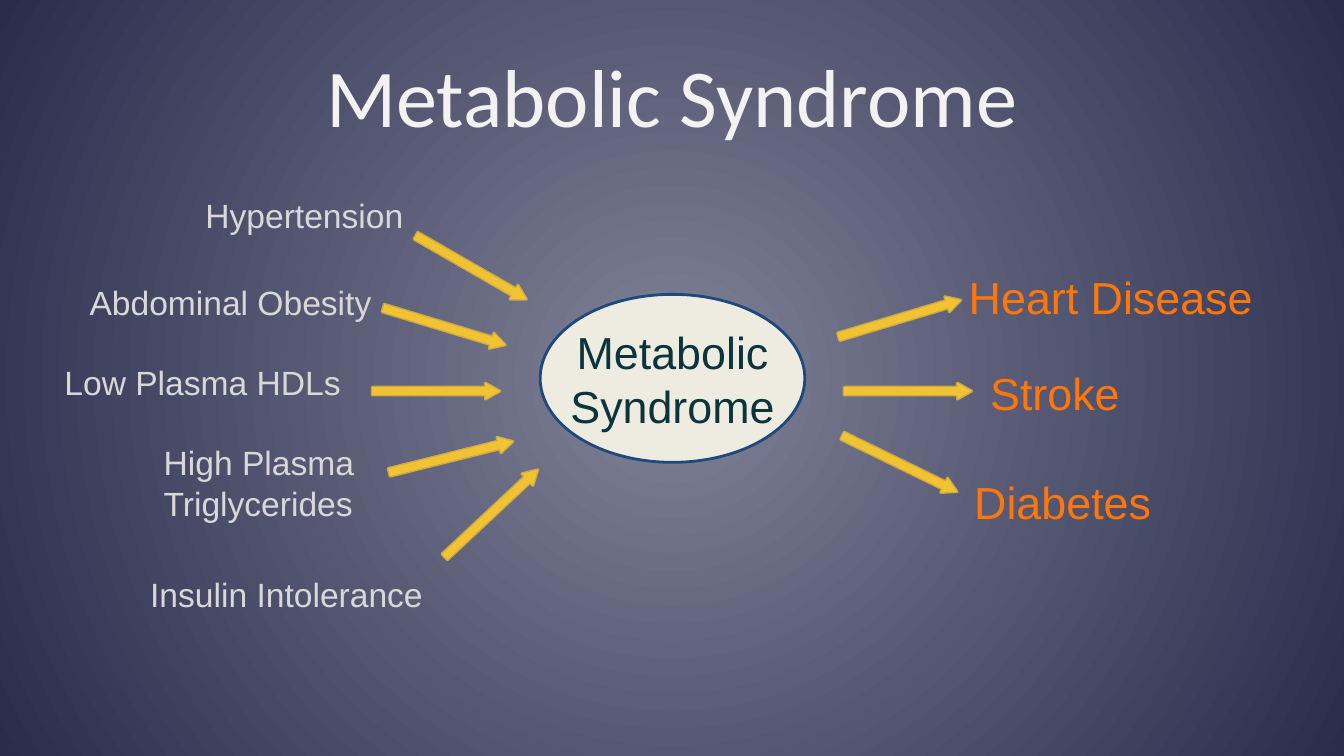
from lxml import etree
from pptx import Presentation
from pptx.dml.color import RGBColor
from pptx.enum.shapes import MSO_SHAPE
from pptx.enum.text import MSO_ANCHOR, PP_ALIGN
from pptx.oxml.ns import qn
from pptx.util import Pt

ELLIPSE, ARROW = MSO_SHAPE.OVAL, MSO_SHAPE.RIGHT_ARROW
TOP, MIDDLE, BOTTOM = MSO_ANCHOR.TOP, MSO_ANCHOR.MIDDLE, MSO_ANCHOR.BOTTOM
LEFT, CENTER = PP_ALIGN.LEFT, PP_ALIGN.CENTER

TOPIC = "Metabolic Syndrome"
TITLE_BOX = (36, 16.6, 648, 67.7)
HUB_BOX = (289.4, 157.7, 141.8, 90)
ARROW_SIZE = (68.4, 8.64)
INSET = 7.2

# label, box (left, top, width, height), alignment, anchor, arrow (left, top, rotation)
CAUSES = [
    ("Hypertension", (97.9, 100.1, 130.3, 30.2), CENTER, MIDDLE, (218.2, 139, 29.9)),
    ("Abdominal Obesity", (38.9, 146.9, 169.2, 30.2), CENTER, MIDDLE, (203.8, 170.6, 16.8)),
    ("Low Plasma HDLs", (27.4, 186.5, 172.1, 30.2), LEFT, TOP, (199.4, 205.2, 0)),
    ("High Plasma Triglycerides", (80.6, 229.7, 118.8, 48.2), LEFT, TOP, (207.4, 240.5, -14)),
    ("Insulin Intolerance", (73.4, 300.2, 161.3, 36.7), LEFT, TOP, (229, 270.7, -43.1)),
]
EFFECTS = [
    ("Heart Disease", (511.9, 137.5, 204.5, 49.7), LEFT, TOP, (447.8, 166.3, -16.7)),
    ("Stroke", (523.4, 188.6, 89.3, 41.8), LEFT, TOP, (452.2, 205.2, 0)),
    ("Diabetes", (514.8, 247, 118.8, 41.8), LEFT, TOP, (447.8, 244.1, 26)),
]
GROUPS = [(CAUSES, 18, "D8D8D8"), (EFFECTS, 24, "FF760B")]


def color(hex_code):
    return RGBColor.from_string(hex_code)


def paint_background(slide, center, edge):
    """Fill the slide with a gradient running outwards from its middle."""
    fill = slide.background.fill
    fill.gradient()
    for stop, shade, position in zip(fill.gradient_stops, (center, edge), (0, 1)):
        stop.color.rgb = color(shade)
        stop.position = position
    gradient = slide.element.find(".//" + qn("a:gradFill"))
    gradient.remove(gradient.find(qn("a:lin")))
    circle = etree.SubElement(gradient, qn("a:path"), {"path": "circle"})
    sides = dict.fromkeys("ltrb", "50000")
    etree.SubElement(circle, qn("a:fillToRect"), sides)


def write(shape, words, size, shade, font="Arial", align=CENTER, anchor=MIDDLE):
    frame = shape.text_frame
    frame.text = words
    frame.word_wrap = True
    frame.vertical_anchor = anchor
    frame.margin_left = frame.margin_right = Pt(INSET)
    frame.margin_top = frame.margin_bottom = Pt(INSET)
    paragraph = frame.paragraphs[0]
    paragraph.alignment = align
    letters = paragraph.runs[0].font
    letters.name, letters.size = font, Pt(size)
    letters.color.rgb = color(shade)


def add_shape(slide, kind, box, fill, line):
    shape = slide.shapes.add_shape(kind, *map(Pt, box))
    shape.shadow.inherit = False
    shape.fill.solid()
    shape.fill.fore_color.rgb = color(fill)
    shape.line.color.rgb = color(line)
    shape.line.width = Pt(1.5)
    return shape


def add_arrow(slide, left, top, rotation):
    arrow = add_shape(slide, ARROW, (left, top, *ARROW_SIZE), "F1C232", "F1C232")
    arrow.adjustments[0], arrow.adjustments[1] = 0.5, 0.895
    arrow.rotation = rotation
    line_color = arrow.element.spPr.find(qn("a:ln")).find(".//" + qn("a:srgbClr"))
    etree.SubElement(line_color, qn("a:alpha"), val="73000")


def add_label(slide, box, *text, **layout):
    write(slide.shapes.add_textbox(*map(Pt, box)), *text, **layout)


def main():
    deck = Presentation()
    deck.slide_width, deck.slide_height = Pt(720), Pt(405)
    slide = deck.slides.add_slide(deck.slide_layouts[5])
    paint_background(slide, "808297", "292D4D")

    title = slide.shapes.title
    title.left, title.top, title.width, title.height = map(Pt, TITLE_BOX)
    write(title, TOPIC, 44, "F2F2F2", font="Calibri", anchor=BOTTOM)

    add_shape(slide, ELLIPSE, HUB_BOX, "EEECE1", "1F497D")
    add_label(slide, HUB_BOX, TOPIC, 24, "0C343D")

    for group, size, shade in GROUPS:
        for label, box, align, anchor, arrow in group:
            add_arrow(slide, *arrow)
            add_label(slide, box, label, size, shade, align=align, anchor=anchor)

    deck.save("out.pptx")


if __name__ == "__main__":
    main()
